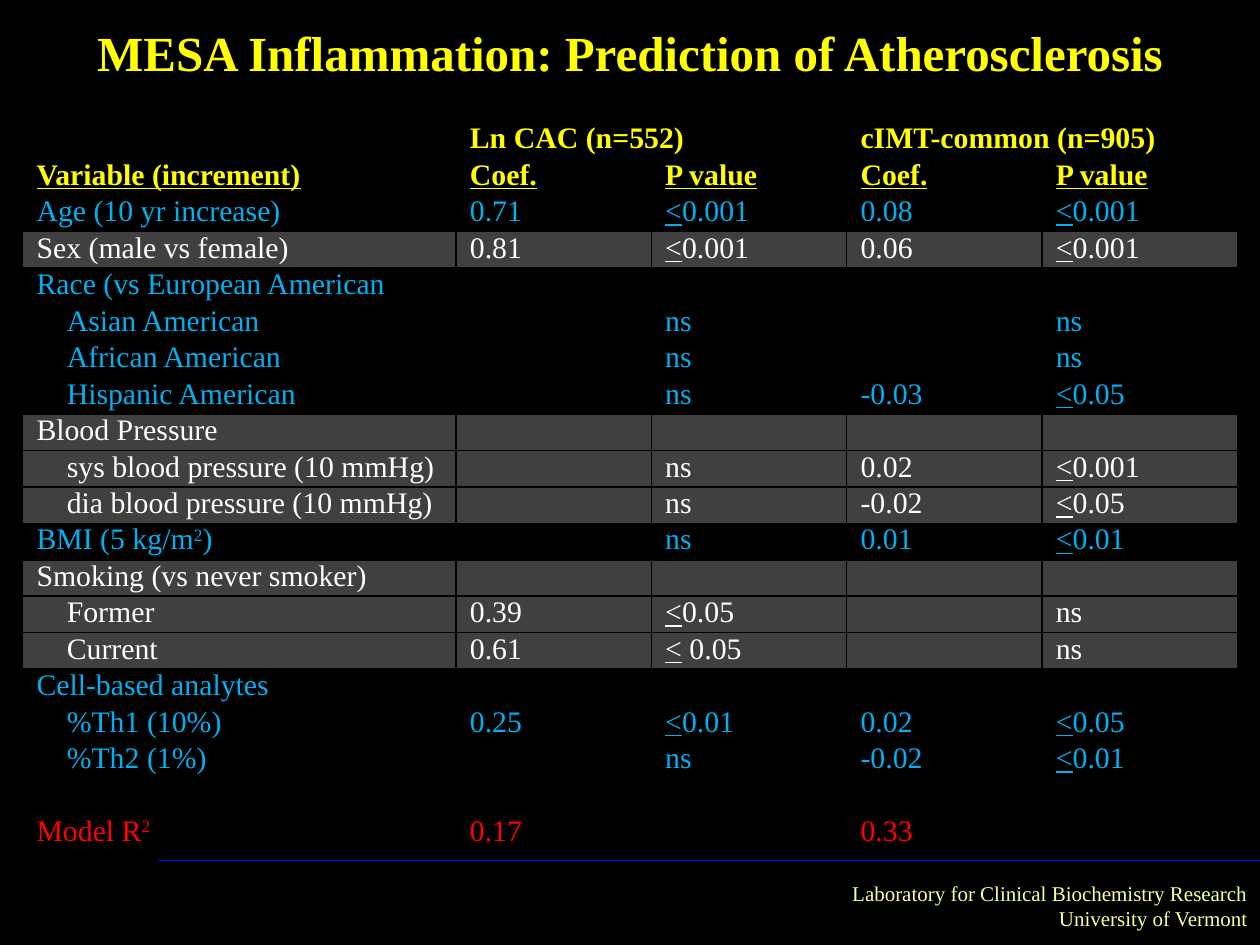
import pptx
import pptx.dml.color
import pptx.enum.shapes
import pptx.enum.text
import pptx.oxml
import pptx.oxml.ns
import pptx.util
from lxml import etree

Inches = pptx.util.Inches
Pt = pptx.util.Pt
RGBColor = pptx.dml.color.RGBColor
Align = pptx.enum.text.PP_ALIGN
Anchor = pptx.enum.text.MSO_ANCHOR
qn = pptx.oxml.ns.qn

BLACK = RGBColor(0x00, 0x00, 0x00)
WHITE = RGBColor(0xFF, 0xFF, 0xFF)
YELLOW = RGBColor(0xFF, 0xFF, 0x00)
PALE_YELLOW = RGBColor(0xFF, 0xFF, 0x99)
SKY = RGBColor(0x00, 0xB0, 0xF0)
RED = RGBColor(0xFF, 0x00, 0x00)
BLUE = RGBColor(0x00, 0x00, 0xFF)
GRAY = RGBColor(0x40, 0x40, 0x40)

FONT = "Times New Roman"
TABLE_SIZE = 17
INDENT = Inches(0.24)

# Row style: text colour, fill, bold, underline
GROUP = (YELLOW, None, True, False)
HEADER = (YELLOW, None, True, True)
PLAIN = (SKY, None, False, False)
SHADED = (WHITE, GRAY, False, False)
MODEL = (RED, None, False, False)

# "|" parts runs, "^" raises a run, "<" alone is underlined, ">" indents a label
ROWS = [
    (GROUP, "", "Ln CAC (n=552)", "", "cIMT-common (n=905)", ""),
    (HEADER, "Variable (increment)", "Coef.", "P value", "Coef.", "P value"),
    (PLAIN, "Age (10 yr increase)", "0.71", "<|0.001", "0.08", "<|0.001"),
    (SHADED, "Sex (male vs female)", "0.81", "<|0.001", "0.06", "<|0.001"),
    (PLAIN, "Race (vs European American", "", "", "", ""),
    (PLAIN, ">Asian American", "", "ns", "", "ns"),
    (PLAIN, ">African American", "", "ns", "", "ns"),
    (PLAIN, ">Hispanic American", "", "ns", "-0.03", "<|0.05"),
    (SHADED, "Blood Pressure", "", "", "", ""),
    (SHADED, ">sys blood pressure (10 mmHg)", "", "ns", "0.02", "<|0.001"),
    (SHADED, ">dia blood pressure (10 mmHg)", "", "ns", "-0.02", "<|0.05"),
    (PLAIN, "BMI (5 kg/m|^2|)", "", "ns", "0.01", "<|0.01"),
    (SHADED, "Smoking (vs never smoker)", "", "", "", ""),
    (SHADED, ">Former", "0.39", "<|0.05", "", "ns"),
    (SHADED, ">Current", "0.61", "<| 0.05", "", "ns"),
    (PLAIN, "Cell-based analytes", "", "", "", ""),
    (PLAIN, ">%Th1 (10%)", "0.25", "<|0.01", "0.02", "<|0.05"),
    (PLAIN, ">%Th2 (1%)", "", "ns", "-0.02", "<|0.01"),
    (PLAIN, "", "", "", "", ""),
    (MODEL, "Model R|^2", "0.17", "", "0.33", ""),
]


def write_text(paragraph, text, size, color, bold=False, underline=False, align=Align.LEFT):
    paragraph.alignment = align
    if text.startswith(">"):
        text = text[1:]
        paragraph._p.get_or_add_pPr().set("marL", str(INDENT))
    if not text:
        # An empty cell keeps the row low only if its end mark is small too
        end = etree.SubElement(paragraph._p, qn("a:endParaRPr"), sz=str(size * 100))
        etree.SubElement(end, qn("a:latin"), typeface=FONT)
        return
    for piece in text.split("|"):
        run = paragraph.add_run()
        run.text = piece.lstrip("^")
        font = run.font
        font.name, font.size, font.bold = FONT, Pt(size), bold
        font.underline = underline or piece == "<"
        font.color.rgb = color
        if piece.startswith("^"):
            font._element.set("baseline", "30000")


class SlideBuilder:
    def __init__(self, presentation):
        self.slide = presentation.slides.add_slide(presentation.slide_layouts[5])
        fill = self.slide.background.fill
        fill.solid()
        fill.fore_color.rgb = BLACK

    def title(self, text, left, top, width, height):
        shape = self.slide.shapes.title
        shape.left, shape.top = Inches(left), Inches(top)
        shape.width, shape.height = Inches(width), Inches(height)
        shape.text_frame.vertical_anchor = Anchor.MIDDLE
        write_text(shape.text_frame.paragraphs[0], text, size=28, color=YELLOW,
                   bold=True, align=Align.CENTER)

    def line(self, left, right, y):
        connector = self.slide.shapes.add_connector(
            pptx.enum.shapes.MSO_CONNECTOR.STRAIGHT,
            Inches(left), Inches(y), Inches(right), Inches(y))
        connector.line.color.rgb = BLUE
        connector.line.width = Pt(0.75)
        etree.SubElement(connector._element.spPr, qn("a:effectLst"))

    def footer(self, lines, left, top, width, height):
        frame = self.slide.shapes.add_textbox(
            Inches(left), Inches(top), Inches(width), Inches(height)).text_frame
        frame.word_wrap = False
        frame.auto_size = pptx.enum.text.MSO_AUTO_SIZE.SHAPE_TO_FIT_TEXT
        for index, text in enumerate(lines):
            paragraph = frame.add_paragraph() if index else frame.paragraphs[0]
            write_text(paragraph, text, size=12, color=PALE_YELLOW, align=Align.RIGHT)

    def cell(self, cell, text, style):
        color, fill_color, bold, underline = style
        cell.margin_left = cell.margin_right = Inches(0.11)
        cell.margin_top = cell.margin_bottom = 0
        write_text(cell.text_frame.paragraphs[0], text, size=TABLE_SIZE, color=color,
                   bold=bold, underline=underline)
        properties = cell._tc.get_or_add_tcPr()
        for side in ("a:lnL", "a:lnR", "a:lnT", "a:lnB"):
            border = etree.SubElement(properties, qn(side), w=str(Pt(1)))
            solid = etree.SubElement(border, qn("a:solidFill"))
            etree.SubElement(solid, qn("a:srgbClr"), val=str(BLACK))
        if fill_color is None:
            cell.fill.background()
        else:
            cell.fill.solid()
            cell.fill.fore_color.rgb = fill_color

    def table(self, rows, left, top, height, widths):
        table = self.slide.shapes.add_table(
            len(rows), len(widths), Inches(left), Inches(top),
            Inches(sum(widths)), Inches(height)).table
        table.first_row = table.horz_banding = False
        for column, width in zip(table.columns, widths):
            column.width = Inches(width)
        for row_index, (style, *texts) in enumerate(rows):
            for column_index, text in enumerate(texts):
                self.cell(table.cell(row_index, column_index), text, style)
        # Each outcome heading spans its coefficient and P value
        for first in (1, 3):
            table.cell(0, first).merge(table.cell(0, first + 1))


def main():
    presentation = pptx.Presentation()
    presentation.slide_width, presentation.slide_height = Inches(10), Inches(7.5)
    builder = SlideBuilder(presentation)

    # Footer rule and credit
    builder.line(1.25, 10, 6.83)
    builder.footer(["Laboratory for Clinical Biochemistry Research", "University of Vermont"],
                   6.65, 6.94, 3.35, 0.5)

    # Regression results
    builder.table(ROWS, 0.18, 0.97, 5.79, [3.44] + [1.55] * 4)

    builder.title("MESA Inflammation: Prediction of Atherosclerosis", 0.5, 0, 9, 0.83)
    presentation.save("out.pptx")


if __name__ == "__main__":
    main()
